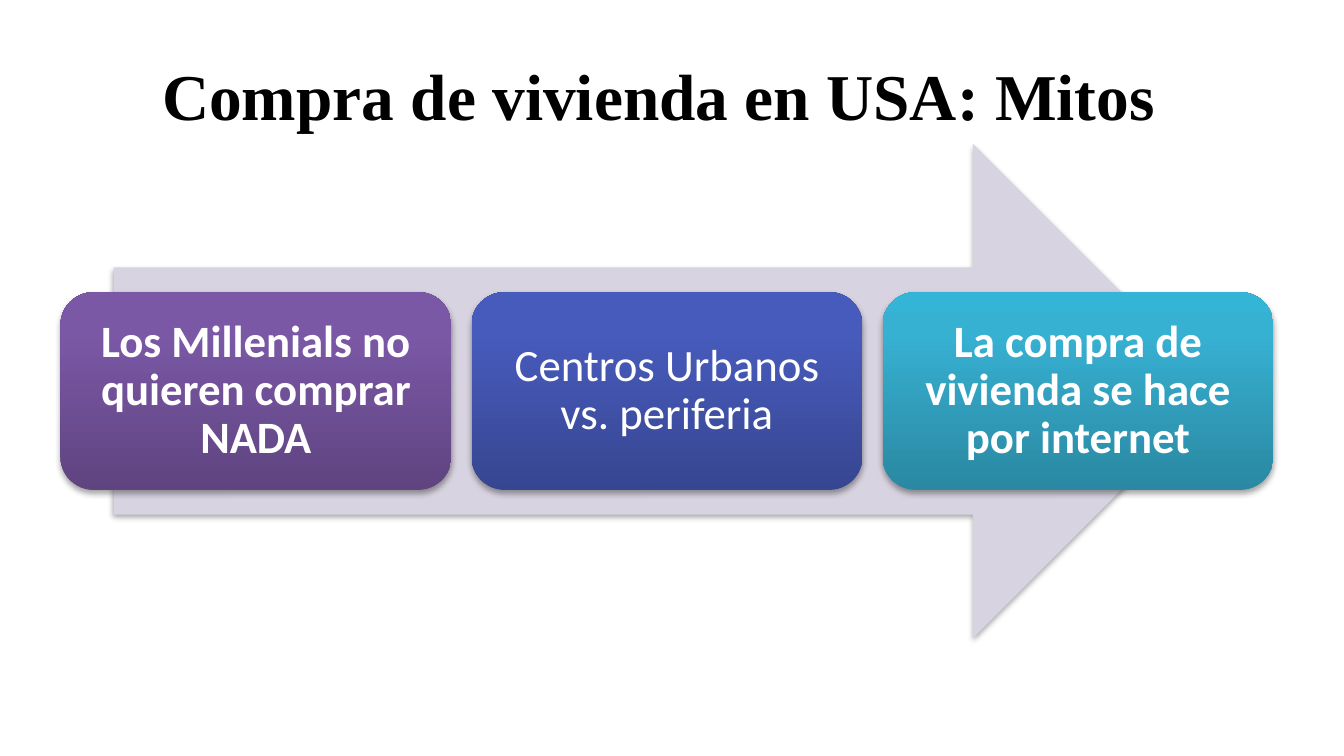
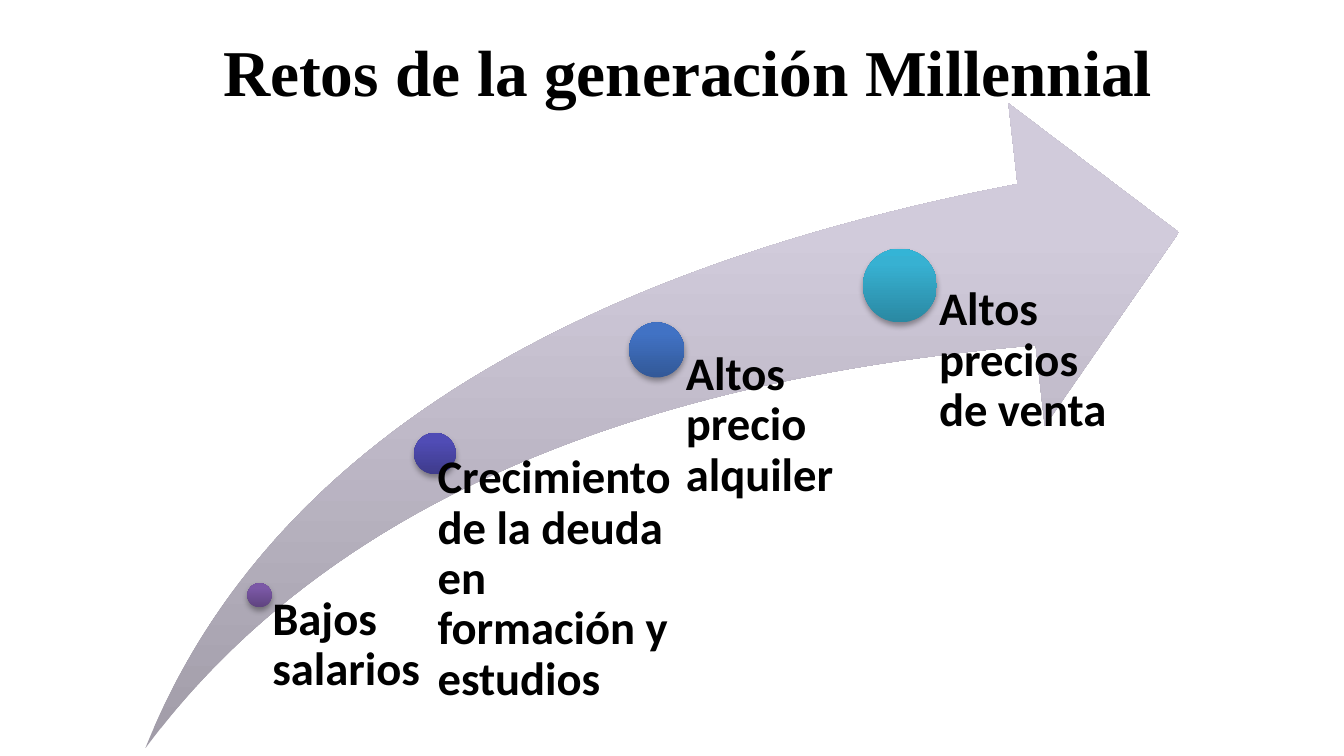
import copy

import pptx
import pptx.dml.color
import pptx.enum.shapes
import pptx.enum.text
import pptx.oxml
import pptx.oxml.ns
import pptx.util

Pt = pptx.util.Pt
SHAPES = pptx.enum.shapes.MSO_SHAPE
ALIGN = pptx.enum.text.PP_ALIGN
ANCHOR = pptx.enum.text.MSO_ANCHOR

COLORS = {"title": "000000", "label": "000000", "card text": "FFFFFF", "arrow": "D8D3E0"}
# Gradients run from bottom to top
GRADIENTS = {
    "swoosh": ("A19CA8", "D1CBDB", "D2CBDC"),
    "purple": ("5F4480", "7B58A6", "7C57A8"),
    "violet": ("3E3B8B", "504CB5", "4F4BB8"),
    "indigo": ("374691", "475BBC", "455ABF"),
    "blue": ("325897", "4172C4", "3F72C7"),
    "teal": ("2A88A2", "37B1D2", "34B4D6"),
}
GRADIENT_POSITIONS = (0, 0.8, 1)
TITLE_FONT, BODY_FONT = "Times New Roman", "Calibri"
SHADOW = (
    '<a:outerShdw xmlns:a="http://schemas.openxmlformats.org/drawingml/2006/main"'
    ' blurRad="40000" dist="23000" dir="5400000" rotWithShape="0">'
    '<a:srgbClr val="000000"><a:alpha val="35000"/></a:srgbClr></a:outerShdw>'
)

# Text, gradient, bold
MYTHS = [
    ("Los Millenials no quieren comprar NADA", "purple", True),
    ("Centros Urbanos vs. periferia", "indigo", False),
    ("La compra de vivienda se hace por internet", "teal", True),
]
# Text, gradient, ball centre x and y, diameter, label shift, label width
CHALLENGES = [
    ("Bajos salarios", "purple", 61.2, 263.5, 13, 0, 94.3),
    ("Crecimiento de la deuda en formación y estudios", "violet", 155.2, 187.6, 22.3, -10.4, 137.5),
    ("Altos precio alquiler", "blue", 274, 132.1, 29.5, 0, 115.9),
    ("Altos precios de venta", "teal", 404.3, 97.6, 39.6, 0, 115.9),
]


def rgb(name):
    return pptx.dml.color.RGBColor.from_string(COLORS.get(name, name))


def points(*lengths):
    return [Pt(length) for length in lengths]


def add_figure(slide, kind, box, shadow=True):
    """Add a preset shape without outline, with a soft shadow if wanted."""
    figure = slide.shapes.add_shape(kind, *points(*box))
    figure.line.fill.background()
    figure.shadow.inherit = False
    if shadow:
        effects = figure._element.spPr.find(pptx.oxml.ns.qn("a:effectLst"))
        effects.append(pptx.oxml.parse_xml(SHADOW))
    return figure


def fill_gradient(figure, name):
    figure.fill.gradient()
    figure.fill.gradient_angle = 90
    stop_list = next(figure._element.spPr.iter(pptx.oxml.ns.qn("a:gsLst")))
    stop_list.append(copy.deepcopy(stop_list[-1]))
    for stop, position, color in zip(figure.fill.gradient_stops, GRADIENT_POSITIONS, GRADIENTS[name]):
        stop.position = position
        stop.color.rgb = rgb(color)


def write(holder, text, font, size, color, bold, align, anchor, margins=None, spacing=None):
    frame = holder.text_frame
    frame.word_wrap = True
    frame.auto_size = pptx.enum.text.MSO_AUTO_SIZE.NONE
    frame.vertical_anchor = anchor
    if margins:
        (frame.margin_left, frame.margin_top,
         frame.margin_right, frame.margin_bottom) = points(*margins)
    frame.text = text
    paragraph = frame.paragraphs[0]
    paragraph.alignment = align
    paragraph.line_spacing = spacing
    paragraph.font.name = font
    paragraph.font.size = Pt(size)
    paragraph.font.bold = bold
    paragraph.font.color.rgb = rgb(color)


def add_titled_slide(deck, text, box):
    slide = deck.slides.add_slide(deck.slide_layouts[5])
    title = slide.shapes.title
    title.left, title.top, title.width, title.height = points(*box)
    write(title, text, TITLE_FONT, 35, "title", True, ALIGN.CENTER, ANCHOR.MIDDLE)
    return slide


def add_myth_process(slide, box):
    """Wide arrow with a row of equal cards across its middle."""
    left, top, width, height = box
    arrow_inset = width * 0.075
    arrow = add_figure(slide, SHAPES.RIGHT_ARROW,
                       (left + arrow_inset, top, width - 2 * arrow_inset, height))
    arrow.fill.solid()
    arrow.fill.fore_color.rgb = rgb("arrow")

    # Cards
    side, gap = 23.8, 10.8
    card_width = (width - 2 * side - gap * (len(MYTHS) - 1)) / len(MYTHS)
    card_height = height * 0.4
    for index, (text, gradient, bold) in enumerate(MYTHS):
        card = add_figure(slide, SHAPES.ROUNDED_RECTANGLE,
                          (left + side + index * (card_width + gap),
                           top + (height - card_height) / 2, card_width, card_height))
        fill_gradient(card, gradient)
        write(card, text, BODY_FONT, 24, "card text", bold, ALIGN.CENTER, ANCHOR.MIDDLE,
              (7.2, 7.2, 7.2, 7.2), 0.9)


def add_challenge_climb(slide, box):
    """Rising arrow with growing balls, each labelled from its centre down."""
    left, top, width, height = box
    swoosh = add_figure(slide, SHAPES.SWOOSH_ARROW, box, shadow=False)
    swoosh.adjustments[0] = swoosh.adjustments[1] = 0.25
    fill_gradient(swoosh, "swoosh")

    # Balls and labels
    for text, gradient, x, y, diameter, shift, label_width in CHALLENGES:
        ball = add_figure(slide, SHAPES.OVAL,
                          (left + x - diameter / 2, top + y - diameter / 2, diameter, diameter))
        fill_gradient(ball, gradient)
        label = slide.shapes.add_textbox(
            *points(left + x + shift, top + y, label_width, height - y))
        write(label, text, BODY_FONT, 25, "label", True, ALIGN.LEFT, ANCHOR.TOP,
              (diameter * 0.53, 0, 0, 0), 0.9)


def main():
    deck = pptx.Presentation()
    deck.slide_width, deck.slide_height = points(720, 405)

    myths = add_titled_slide(deck, "Compra de vivienda en USA: Mitos ", (8.6, 16.6, 697.7, 67.7))
    add_myth_process(myths, (8.6, 77, 697.4, 265))

    challenges = add_titled_slide(deck, "Retos de la generación Millennial", (107.3, 3.6, 522.7, 67.7))
    add_challenge_climb(challenges, (77.8, 55.4, 553.7, 345.6))

    deck.save("out.pptx")


if __name__ == "__main__":
    main()
